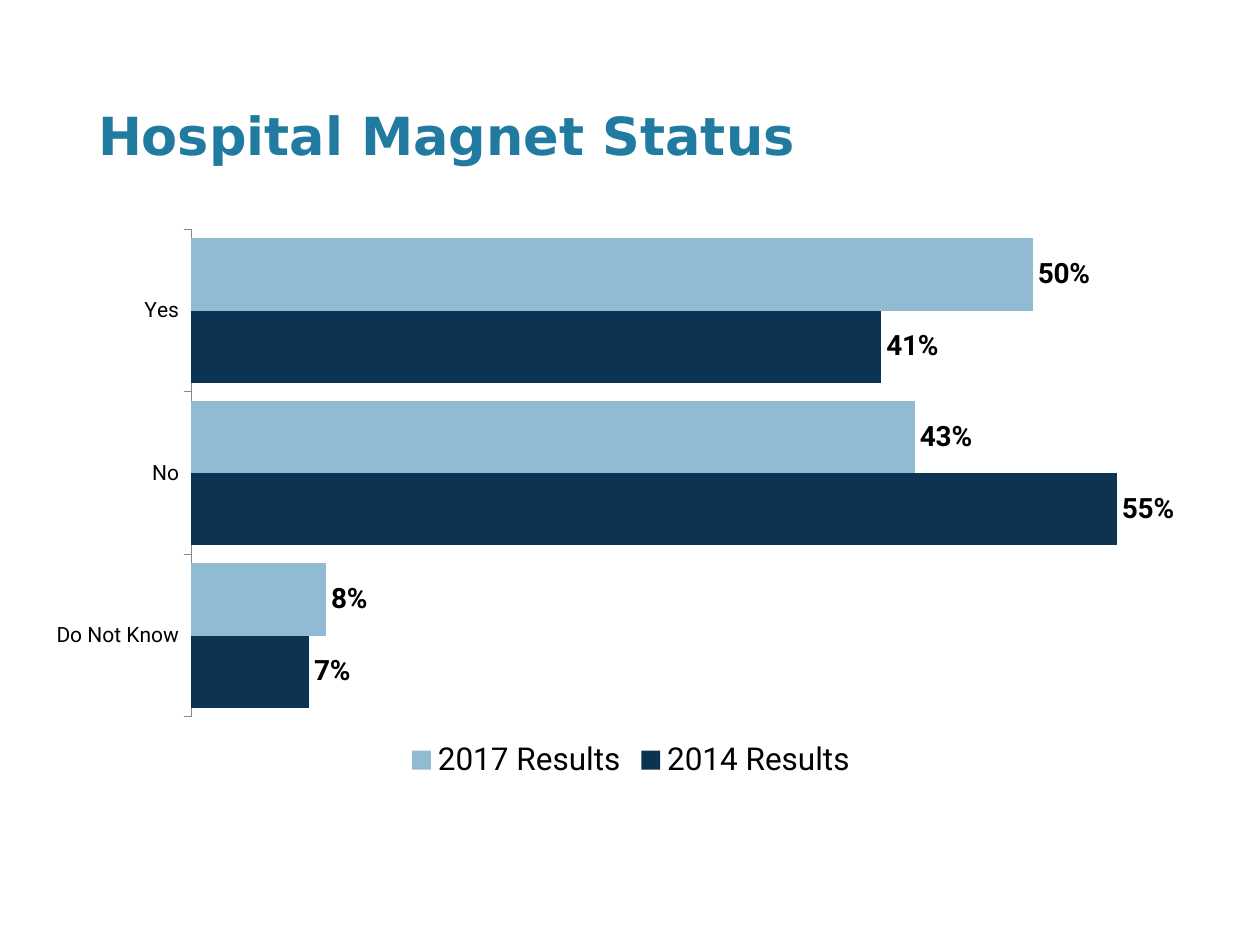
from lxml import etree
from pptx import Presentation
from pptx.chart.data import CategoryChartData
from pptx.dml.color import RGBColor
from pptx.enum.chart import XL_CHART_TYPE as ChartType
from pptx.enum.chart import XL_LABEL_POSITION as LabelPos
from pptx.enum.chart import XL_LEGEND_POSITION as LegendPos
from pptx.enum.chart import XL_TICK_MARK as TickMark
from pptx.enum.text import MSO_ANCHOR as Anchor
from pptx.enum.text import PP_ALIGN as Align
from pptx.oxml.ns import qn
from pptx.util import Inches, Pt

PX = Inches(1) / 126
COLORS = {
    "title": "217AA0",
    "text": "000000",
    "axis": "888888",
    "2014 Results": "0C3351",
    "2017 Results": "91BAD3",
}
ANSWERS = ["Do Not Know", "No", "Yes"]
RESULTS = {
    "2014 Results": [0.07, 0.55, 0.41],
    "2017 Results": [0.08, 0.43, 0.5],
}


def px(length):
    return round(length * PX)


def color(name):
    return RGBColor.from_string(COLORS[name])


def style_font(font, family, size, color_name, bold=False):
    font.name = family
    font.size = Pt(size)
    font.bold = bold
    font.color.rgb = color(color_name)


def place_title(slide, left, top, width, height):
    title = slide.shapes.title
    title.left, title.top = px(left), px(top)
    title.width, title.height = px(width), px(height)
    frame = title.text_frame
    frame.text = "Hospital Magnet Status"
    frame.margin_left = 0
    frame.vertical_anchor = Anchor.MIDDLE
    heading = frame.paragraphs[0]
    heading.alignment = Align.LEFT
    style_font(heading.runs[0].font, "DejaVu Sans", 30, "title", True)


def set_plot_layout(chart, **fractions):
    plot_area = chart._chartSpace.chart.plotArea
    for old_layout in plot_area.findall(qn("c:layout")):
        plot_area.remove(old_layout)
    layout = etree.Element(qn("c:layout"))
    manual = etree.SubElement(layout, qn("c:manualLayout"))
    settings = {"layoutTarget": "inner", "xMode": "edge", "yMode": "edge", **fractions}
    for tag, value in settings.items():
        etree.SubElement(manual, qn(f"c:{tag}")).set("val", str(value))
    plot_area.insert(0, layout)


def place_results_chart(slide, left, top, width, height):
    results = CategoryChartData(number_format="0%")
    results.categories = ANSWERS
    for year, shares in RESULTS.items():
        results.add_series(year, shares)
    chart = slide.shapes.add_chart(
        ChartType.BAR_CLUSTERED, px(left), px(top), px(width), px(height), results
    ).chart
    style_font(chart.font, "Roboto", 18, "text")
    chart.has_title = False
    set_plot_layout(chart, x=0.13, y=0.02, w=0.85, h=0.86)

    chart.has_legend = True
    chart.legend.position = LegendPos.BOTTOM
    chart.legend.include_in_layout = False
    style_font(chart.legend.font, "Roboto", 18, "text")

    answer_axis = chart.category_axis
    answer_axis.major_tick_mark = TickMark.OUTSIDE
    answer_axis.format.line.color.rgb = color("axis")
    answer_axis.format.line.width = Pt(0.75)
    style_font(answer_axis.tick_labels.font, "Roboto", 12, "text")

    share_axis = chart.value_axis
    share_axis.minimum_scale, share_axis.maximum_scale = 0, 0.6
    share_axis.has_major_gridlines = False
    share_axis.visible = False

    plot = chart.plots[0]
    plot.gap_width = 25
    plot.overlap = 0
    plot.vary_by_categories = False
    for series in plot.series:
        series.format.fill.solid()
        series.format.fill.fore_color.rgb = color(series.name)
        labels = series.data_labels
        labels.show_value = True
        labels.number_format = "0%"
        labels.number_format_is_linked = False
        labels.position = LabelPos.OUTSIDE_END
        style_font(labels.font, "Roboto", 16, "text", True)


def main():
    deck = Presentation()
    deck.slide_width, deck.slide_height = px(1260), px(945)
    slide = deck.slides.add_slide(deck.slide_layouts[5])
    place_title(slide, 98, 79, 1143, 111)
    place_results_chart(slide, 37, 218, 1188, 567)
    deck.save("out.pptx")


if __name__ == "__main__":
    main()
